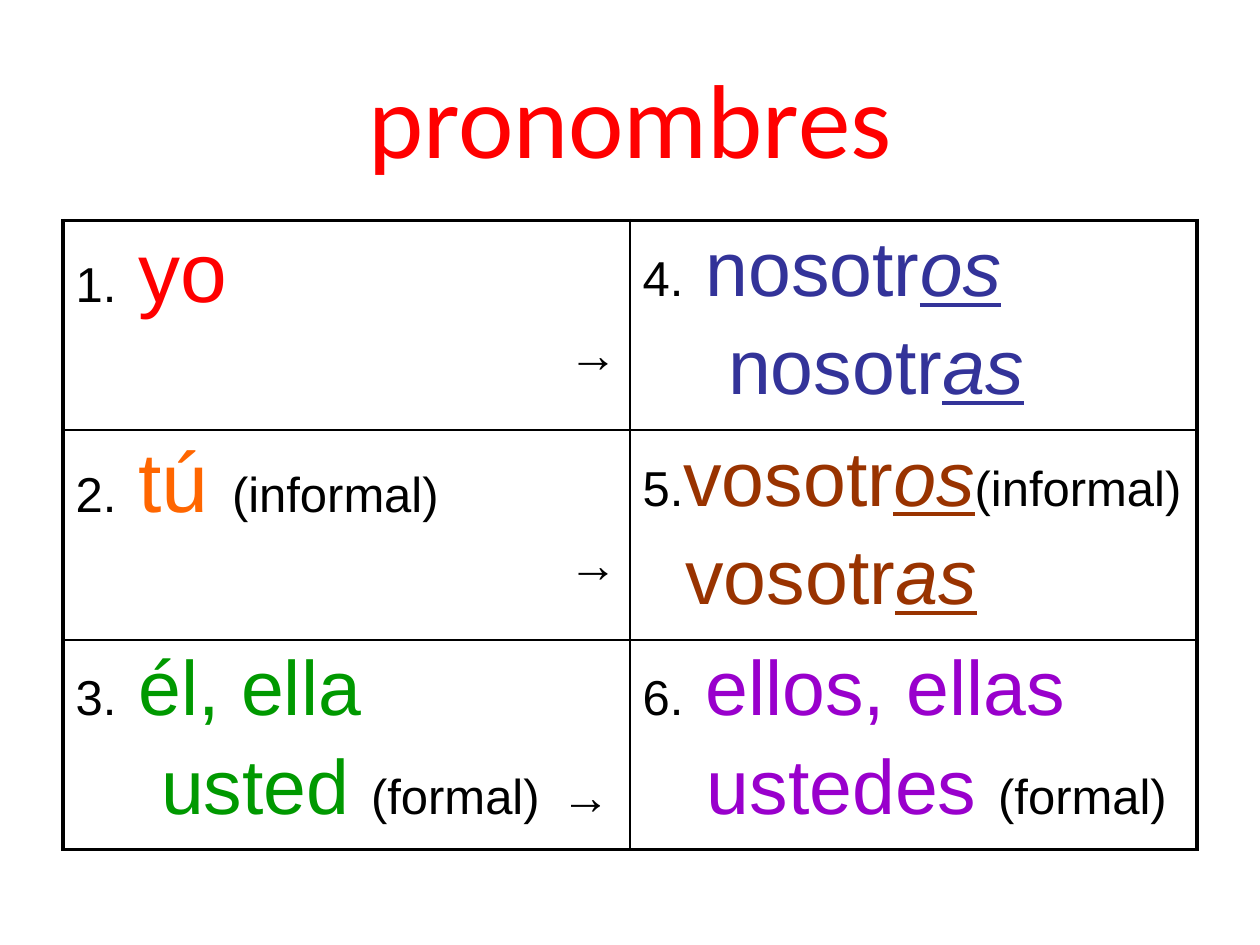
import pptx
import pptx.dml.color
import pptx.enum.text
import pptx.oxml
import pptx.oxml.ns
import pptx.util

Pt = pptx.util.Pt
Align = pptx.enum.text.PP_ALIGN
Anchor = pptx.enum.text.MSO_ANCHOR

BLACK = "000000"
RED = "FF0000"
ORANGE = "FF6600"
GREEN = "009900"
BLUE = "333399"
BROWN = "993300"
PURPLE = "9900CC"

SMALL, LARGE, LARGEST = 28, 44, 48
OUTER, INNER = 2.25, 1


def color(value):
    return pptx.dml.color.RGBColor.from_string(value)


def note(text):
    return text, SMALL, BLACK, False


def word(text, value, size=LARGE):
    return text, size, value, False


def ending(text, value):
    return text, LARGE, value, True


def line(*spans, indent=0, tab=None, align=Align.LEFT):
    return spans, indent, tab, align


def add_span(para, text, size, value, marked=False, font="Arial"):
    span = para.add_run()
    span.text = text
    span.font.name = font
    span.font.size = Pt(size)
    span.font.color.rgb = color(value)
    if marked:
        span.font.italic = True
        span.font.underline = True


def fill_para(para, spans, indent, tab, align):
    para.alignment = align
    para.space_before = Pt(round(max(span[1] for span in spans) * 0.16, 1))
    properties = para._p.get_or_add_pPr()
    properties.set("marL", str(Pt(indent)))
    properties.set("indent", "0")
    if tab:
        properties.append(pptx.oxml.parse_xml(
            f'<a:tabLst {pptx.oxml.ns.nsdecls("a")}>'
            f'<a:tab pos="{Pt(tab)}" algn="l"/></a:tabLst>'))
    for span in spans:
        add_span(para, *span)


def set_border(cell, side, width):
    cell._tc.get_or_add_tcPr().append(pptx.oxml.parse_xml(
        f'<a:ln{side} {pptx.oxml.ns.nsdecls("a")} w="{Pt(width)}">'
        f'<a:solidFill><a:srgbClr val="{BLACK}"/></a:solidFill></a:ln{side}>'))


def add_title(page, text):
    box = page.shapes.add_textbox(Pt(36), Pt(21.6), Pt(648), Pt(90))
    frame = box.text_frame
    frame.word_wrap = True
    frame.vertical_anchor = Anchor.MIDDLE
    para = frame.paragraphs[0]
    para.alignment = Align.CENTER
    add_span(para, text, 60, RED, font="Calibri")


def add_pronoun_table(page, rows):
    row_count, column_count = len(rows), len(rows[0])
    row_height = 118.8
    table = page.shapes.add_table(
        row_count, column_count, Pt(36), Pt(126), Pt(648), Pt(row_height * row_count)).table
    table.first_row = False
    table.horz_banding = False
    for row_index, row in enumerate(rows):
        table.rows[row_index].height = Pt(row_height)
        for column_index, lines in enumerate(row):
            cell = table.cell(row_index, column_index)
            edges = {
                "L": column_index == 0,
                "R": column_index == column_count - 1,
                "T": row_index == 0,
                "B": row_index == row_count - 1,
            }
            for side, is_outer in edges.items():
                set_border(cell, side, OUTER if is_outer else INNER)
            cell.fill.background()
            frame = cell.text_frame
            for index, content in enumerate(lines):
                para = frame.add_paragraph() if index else frame.paragraphs[0]
                fill_para(para, *content)


def main():
    deck = pptx.Presentation()
    deck.slide_width, deck.slide_height = Pt(720), Pt(540)
    page = deck.slides.add_slide(deck.slide_layouts[6])
    add_title(page, "pronombres")

    singular_tab = 85.6
    arrow = line(note("→"), align=Align.RIGHT)
    add_pronoun_table(page, [
        [
            [line(note("1.\t"), word("yo", RED, LARGEST), tab=singular_tab), arrow],
            [line(note("4.\t"), word("nosotr", BLUE), ending("os", BLUE), tab=46.7),
             line(word("nosotr", BLUE), ending("as", BLUE), indent=48.9)],
        ],
        [
            [line(note("2.\t"), word("tú ", ORANGE, LARGEST), note("(informal)"),
                  tab=singular_tab), arrow],
            [line(note("5."), word("vosotr", BROWN), ending("os", BROWN), note("(informal)")),
             line(word("vosotr", BROWN), ending("as", BROWN), indent=24.5)],
        ],
        [
            [line(note("3.\t"), word("él, ella", GREEN), tab=singular_tab),
             line(word("usted ", GREEN), note("(formal)"), word(" ", GREEN), note("→"),
                  indent=48.9)],
            [line(note("6.\t"), word("ellos, ellas", PURPLE), tab=54.5),
             line(word("ustedes ", PURPLE), note("(formal)"), indent=36.7)],
        ],
    ])
    deck.save("out.pptx")


if __name__ == "__main__":
    main()
